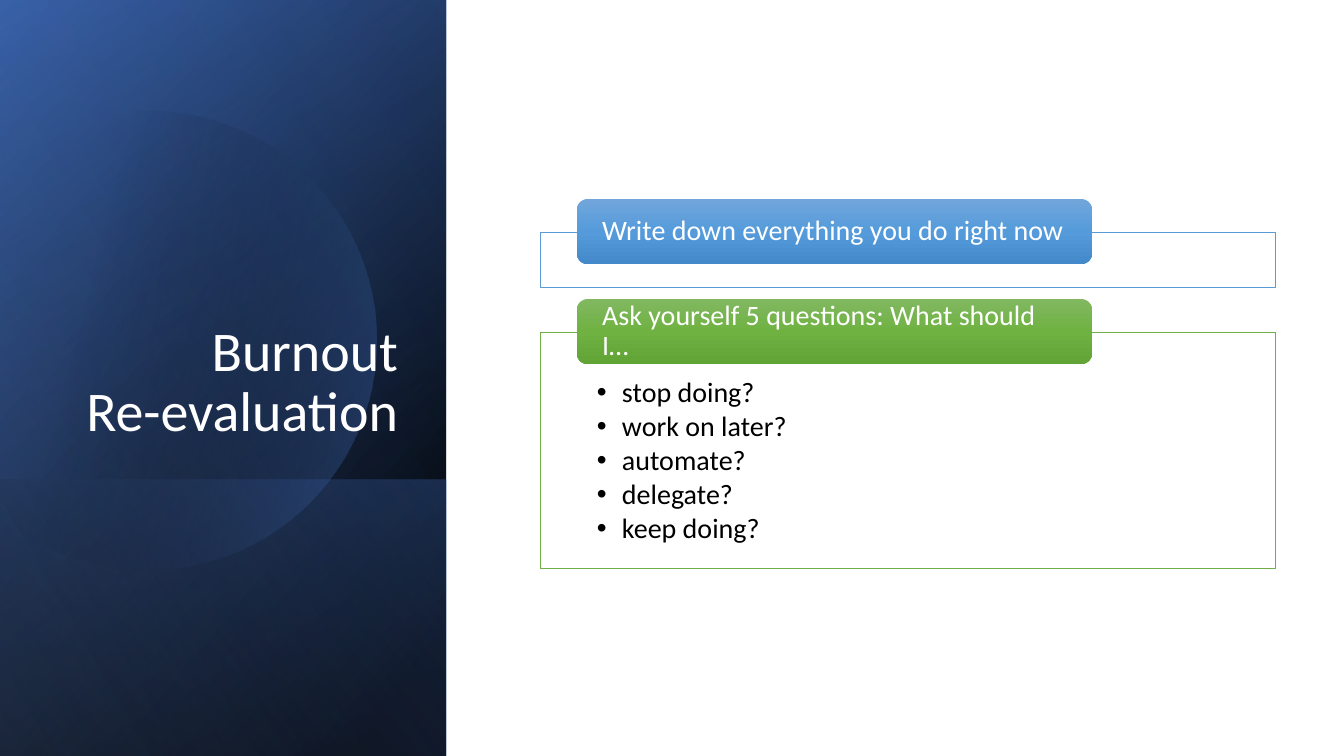
from math import cos, radians, sin

from lxml import etree
from pptx import Presentation
from pptx.dml.color import RGBColor
from pptx.enum.shapes import MSO_SHAPE as Shape
from pptx.enum.text import MSO_ANCHOR as Anchor, PP_ALIGN as Align
from pptx.oxml import parse_xml
from pptx.oxml.ns import nsdecls, qn
from pptx.util import Pt

TITLE = "Burnout\vRe-evaluation"
FONT = "Calibri"
COLORS = {
    "white": "FFFFFF", "black": "000000", "navy": "2F5597",
    "accent": "4472C4", "pale": "8FAADC", "blue": "5B9BD5", "green": "70AD47",
}
# Gradient stops are (position %, colour, opacity %).
FULL_PANEL = (0, 0, 446, 756)
FOOT_PANEL = (0, 480, 446, 276)
BASE_PANELS = [
    (FULL_PANEL, 50, [(8, COLORS["black"], 100), (100, COLORS["navy"], 100)]),
    (FULL_PANEL, 30, [(0, COLORS["black"], 0), (99, COLORS["accent"], 46)]),
    (FOOT_PANEL, 130, [(2, COLORS["accent"], 29), (100, COLORS["black"], 30)]),
]
DISC_STOPS = [(29, COLORS["black"], 0), (100, COLORS["accent"], 43)]
GLOW_PANEL = (FULL_PANEL, 120, [(0, COLORS["black"], 0), (99, COLORS["pale"], 11)])
STEPS = [
    {"heading": "Write down everything you do right now", "items": [],
     "line": COLORS["blue"], "shades": ["71A6DB", "559BDB", "448ACA"],
     "top": 232, "height": 55},
    {"heading": "Ask yourself 5 questions: What should I…",
     "items": ["stop doing?", "work on later?", "automate?", "delegate?", "keep doing?"],
     "line": COLORS["green"], "shades": ["81B861", "6FB242", "62A336"],
     "top": 332, "height": 236},
]
BODY_LEFT, BODY_WIDTH = 540, 735
HEAD_LEFT, HEAD_WIDTH, HEAD_HEIGHT = 577, 515, 65
INCH_PX = 100.8


def px(value):
    return round(value * 914400 / INCH_PX)


def style_gradient(shape, stops, angle):
    """Give the shape a linear gradient without line or shadow."""
    marks = "".join(
        f'<a:gs pos="{place * 1000}"><a:srgbClr val="{color}">'
        f'<a:alpha val="{opacity * 1000}"/></a:srgbClr></a:gs>'
        for place, color, opacity in stops)
    gradient = parse_xml(
        f'<a:gradFill {nsdecls("a")} rotWithShape="1"><a:gsLst>{marks}</a:gsLst>'
        f'<a:lin ang="{angle * 60000}" scaled="0"/></a:gradFill>')
    shape.shadow.inherit = False
    shape.line.fill.background()
    shape.fill.solid()
    properties = shape.element.spPr
    properties.replace(properties.find(qn("a:solidFill")), gradient)


def add_panel(page, area, angle, stops):
    """Add a mirrored quarter-turned rectangle that covers the area."""
    left, top, width, height = area
    shift = (width - height) / 2
    panel = page.shapes.add_shape(
        Shape.RECTANGLE, px(left + shift), px(top - shift), px(height), px(width))
    panel.rotation = 90
    panel.element.spPr.find(qn("a:xfrm")).set("flipH", "1")
    style_gradient(panel, stops, angle)


def add_disc(page):
    """Add the disc whose left side is cut off by a vertical chord."""
    center_x, center_y, radius = 147, 340, 229
    points = [(px(center_x + radius * cos(radians(turn))),
               px(center_y + radius * sin(radians(turn))))
              for turn in range(-135, 136, 3)]
    builder = page.shapes.build_freeform(*points[0])
    builder.add_line_segments(points[1:], close=True)
    style_gradient(builder.convert_to_shape(), DISC_STOPS, 14)


def style_text(frame, size, color, align):
    for para in frame.paragraphs:
        para.alignment = align
        para.line_spacing = 0.9
        for span in para.runs:
            span.font.name = FONT
            span.font.size = Pt(size)
            span.font.color.rgb = RGBColor.from_string(color)


def set_insets(frame, left, top, right, bottom):
    frame.word_wrap = True
    frame.margin_left, frame.margin_top = px(left), px(top)
    frame.margin_right, frame.margin_bottom = px(right), px(bottom)


def add_bullet(para):
    para.space_after = Pt(2.7)
    properties = para._p.get_or_add_pPr()
    properties.set("marL", str(px(25)))
    properties.set("indent", str(px(-25)))
    etree.SubElement(properties, qn("a:buFont")).set("typeface", "Arial")
    etree.SubElement(properties, qn("a:buChar")).set("char", "•")


def add_step(page, step):
    body = page.shapes.add_shape(
        Shape.RECTANGLE, px(BODY_LEFT), px(step["top"]), px(BODY_WIDTH), px(step["height"]))
    body.shadow.inherit = False
    body.fill.solid()
    body.fill.fore_color.rgb = RGBColor.from_string(COLORS["white"])
    body.line.color.rgb = RGBColor.from_string(step["line"])
    body.line.width = Pt(0.5)
    if step["items"]:
        frame = body.text_frame
        frame.text = "\n".join(step["items"])
        frame.vertical_anchor = Anchor.TOP
        set_insets(frame, 57, 46, 57, 16)
        style_text(frame, 20, COLORS["black"], Align.LEFT)
        for para in frame.paragraphs:
            add_bullet(para)

    head = page.shapes.add_shape(
        Shape.ROUNDED_RECTANGLE, px(HEAD_LEFT), px(step["top"] - HEAD_HEIGHT // 2 - 1),
        px(HEAD_WIDTH), px(HEAD_HEIGHT))
    style_gradient(head, [(50 * rank, shade, 100)
                          for rank, shade in enumerate(step["shades"])], 90)
    head.text_frame.text = step["heading"]
    head.text_frame.vertical_anchor = Anchor.MIDDLE
    set_insets(head.text_frame, 22, 0, 22, 0)
    style_text(head.text_frame, 20, COLORS["white"], Align.LEFT)


def place_title(page):
    title = page.shapes.title
    title.left, title.top, title.width, title.height = map(px, (65, 185, 343, 264))
    title.text_frame.text = TITLE
    title.text_frame.vertical_anchor = Anchor.BOTTOM
    set_insets(title.text_frame, 10, 5, 10, 5)
    style_text(title.text_frame, 40, COLORS["white"], Align.RIGHT)
    title.element.getparent().append(title.element)  # in front of the panels


def main():
    deck = Presentation()
    deck.slide_width, deck.slide_height = px(1344), px(756)
    page = deck.slides.add_slide(deck.slide_layouts[5])
    for panel in BASE_PANELS:
        add_panel(page, *panel)
    add_disc(page)
    add_panel(page, *GLOW_PANEL)
    place_title(page)
    for step in STEPS:
        add_step(page, step)
    deck.save("out.pptx")


if __name__ == "__main__":
    main()
